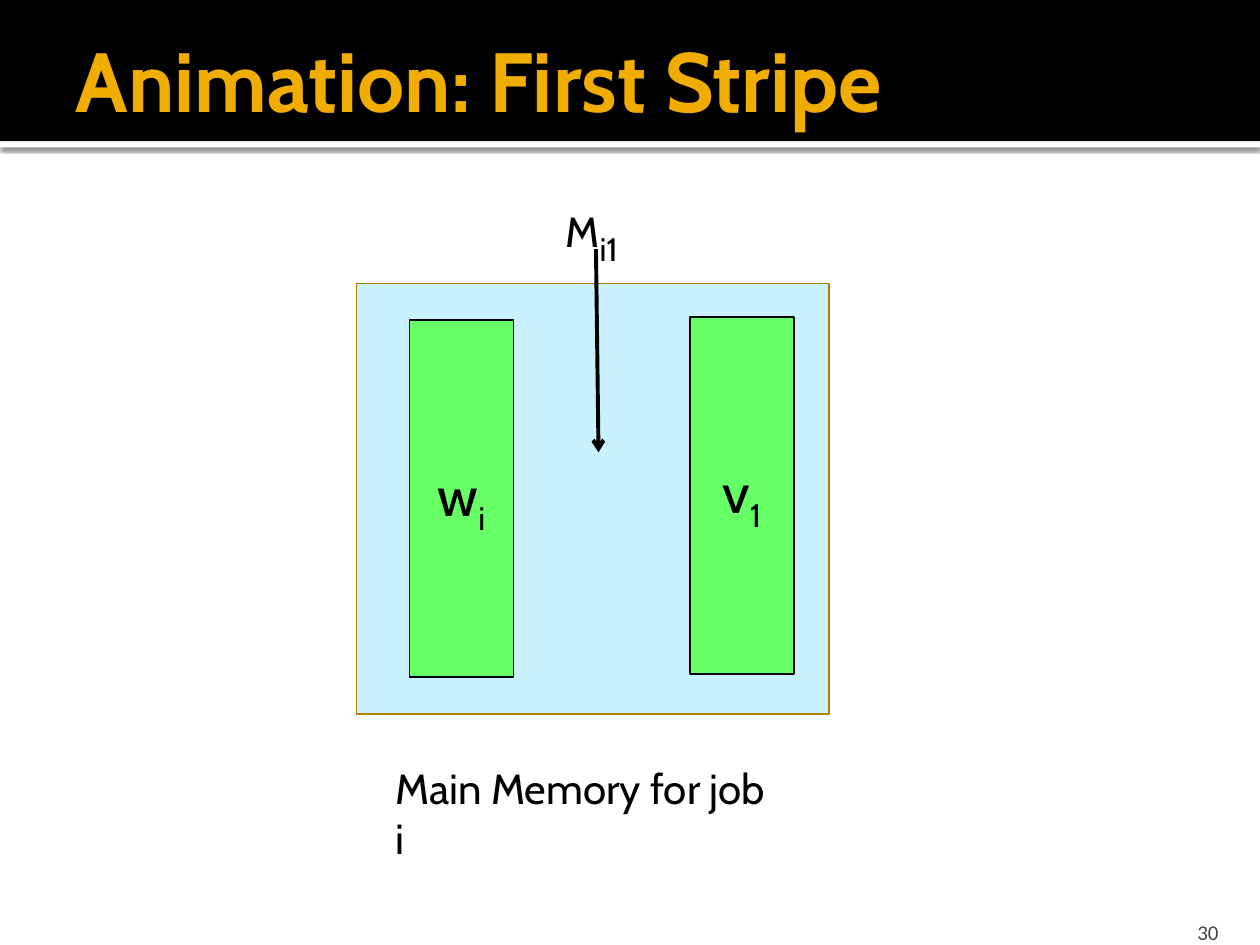
"""Builds the slide on the first stripe of a matrix held in main memory."""
from dataclasses import dataclass
from typing import Optional

from lxml import etree
from pptx import Presentation
from pptx.dml.color import RGBColor
from pptx.enum import shapes as kinds, text as txt
from pptx.oxml import ns, parse_xml
from pptx.util import Pt

BLACK = RGBColor(0, 0, 0)
WHITE = RGBColor(255, 255, 255)
GOLD = RGBColor(0xF0, 0xAD, 0x00)
BROWN = RGBColor(0xB2, 0x80, 0x00)
SKY = RGBColor(0xC9, 0xF1, 0xFF)
GREEN = RGBColor(0x66, 0xFF, 0x66)
GREY = RGBColor(0x45, 0x45, 0x45)
FONT = "Cabin"
SHADE = (
    f'<a:effectLst {ns.nsdecls("a")}>'
    '<a:outerShdw blurRad="31750" dist="10160" dir="5400000" algn="t" rotWithShape="0">'
    '<a:srgbClr val="000000"><a:alpha val="60000"/></a:srgbClr>'
    "</a:outerShdw></a:effectLst>"
)


@dataclass
class Box:
    left: float
    top: float
    width: float
    height: float
    fill: Optional[RGBColor] = None
    line: Optional[RGBColor] = None
    text: str = ""
    sub: str = ""
    size: float = 24
    low: float = 24
    font: str = FONT
    color: RGBColor = BLACK
    align: txt.PP_ALIGN = txt.PP_ALIGN.LEFT
    anchor: txt.MSO_ANCHOR = txt.MSO_ANCHOR.TOP

    def place(self) -> tuple:
        return Pt(self.left), Pt(self.top), Pt(self.width), Pt(self.height)


def write(shape, box: Box) -> None:
    frame = shape.text_frame
    frame.word_wrap = True
    frame.vertical_anchor = box.anchor
    para = frame.paragraphs[0]
    para.alignment = box.align
    para.font.name = box.font
    para.font.size = Pt(box.size)
    para.font.color.rgb = box.color
    para.add_run().text = box.text
    if box.sub:
        run = para.add_run()
        run.text = box.sub
        run.font.size = Pt(box.low)
        run.font._element.set("baseline", "-25000")


def draw(slide, box: Box):
    if box.fill is None:
        shape = slide.shapes.add_textbox(*box.place())
    else:
        shape = slide.shapes.add_shape(kinds.MSO_SHAPE.RECTANGLE, *box.place())
        shape.shadow.inherit = False
        shape.fill.solid()
        shape.fill.fore_color.rgb = box.fill
        if box.line is None:
            shape.line.fill.background()
        else:
            shape.line.color.rgb = box.line
            shape.line.width = Pt(1)
    if box.text:
        write(shape, box)
    return shape


def stripe(left: float, top: float, name: str, sub: str) -> Box:
    return Box(left, top, 59.5, 204, GREEN, BLACK, name, sub, 32, 32,
               align=txt.PP_ALIGN.CENTER, anchor=txt.MSO_ANCHOR.MIDDLE)


def arrow(slide, start, x: float, y: float) -> None:
    link = slide.shapes.add_connector(
        kinds.MSO_CONNECTOR.STRAIGHT, Pt(0), Pt(0), Pt(x), Pt(y))
    link.begin_connect(start, 2)
    link.line.color.rgb = BLACK
    link.line.width = Pt(2.25)
    etree.SubElement(link.line._get_or_add_ln(), ns.qn("a:tailEnd"), type="arrow")
    etree.SubElement(link._element.spPr, ns.qn("a:effectLst"))


def head(slide) -> None:
    rule = draw(slide, Box(0, 80.64, 720, 3.6, WHITE))
    props = rule._element.spPr
    props.replace(props.find(ns.qn("a:effectLst")), parse_xml(SHADE))
    draw(slide, Box(0, 0, 720, 80.64, BLACK))
    title = slide.shapes.title
    slide.shapes._spTree.append(title._element)
    box = Box(36, 12.24, 684, 66.24, text="Animation: First Stripe", size=48,
              color=GOLD, anchor=txt.MSO_ANCHOR.MIDDLE)
    title.left, title.top, title.width, title.height = box.place()
    write(title, box)
    title.text_frame.paragraphs[0].font.bold = True
    title.text_frame.margin_right = Pt(3.6)


def main() -> None:
    deck = Presentation()
    deck.slide_width, deck.slide_height = Pt(720), Pt(540)
    slide = deck.slides.add_slide(deck.slide_layouts[5])
    head(slide)
    page = draw(slide, Box(645.84, 518.4, 57.6, 21.6, text="30", size=12,
                           font="Calibri", color=GREY, align=txt.PP_ALIGN.RIGHT,
                           anchor=txt.MSO_ANCHOR.BOTTOM))
    page.text_frame.margin_bottom = 0
    draw(slide, Box(203.76, 162, 270, 246, SKY, BROWN))
    draw(slide, Box(218.88, 432, 234.72, 36, text="Main Memory for job i"))
    draw(slide, stripe(234, 182.88, "w", "i"))
    draw(slide, stripe(394.2, 181.2, "v", "1"))
    label = draw(slide, Box(316.08, 106, 49, 36.4, text="M", sub="i1", low=32))
    arrow(slide, label, 342, 258.48)
    deck.save("out.pptx")


if __name__ == "__main__":
    main()
